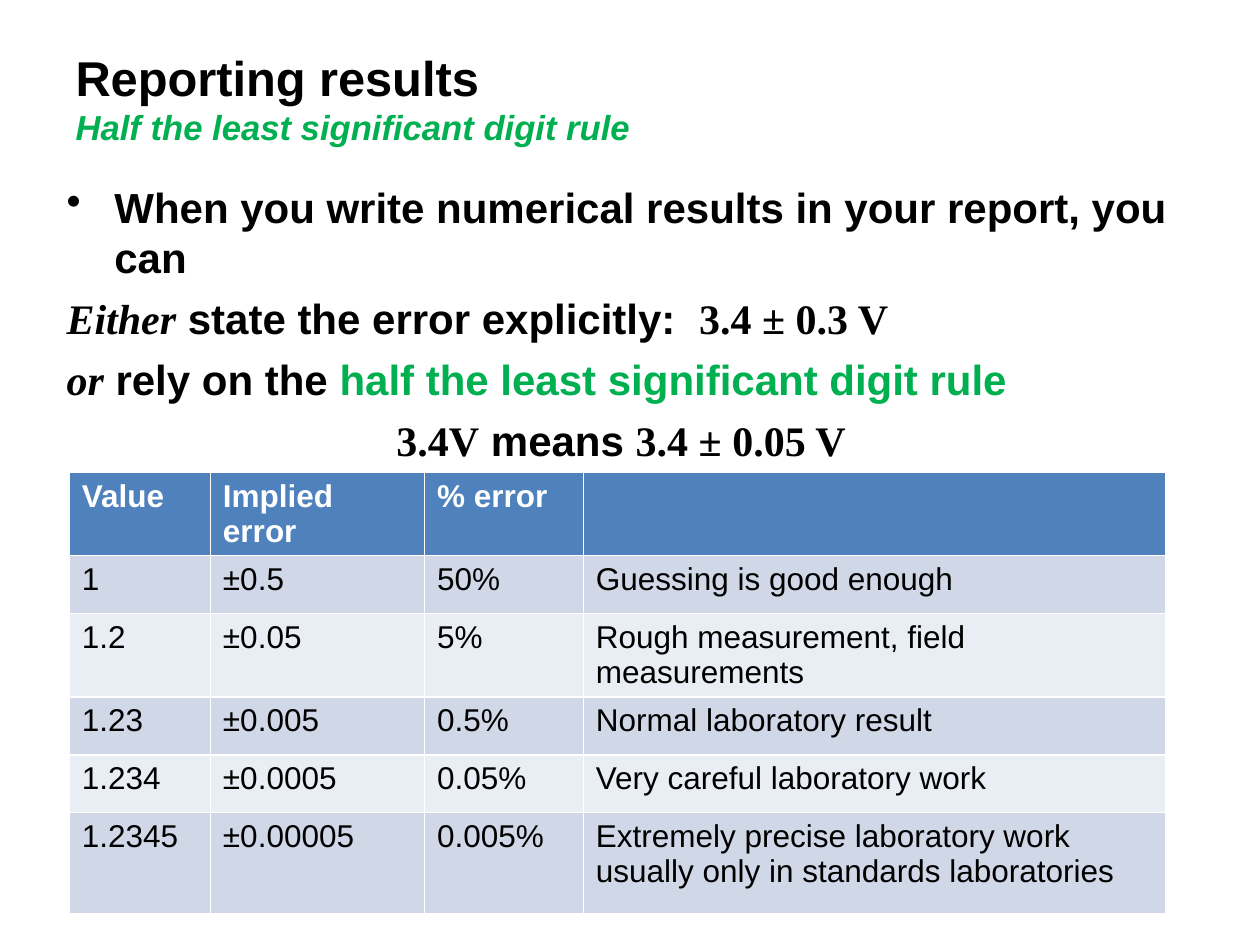
from pptx import Presentation
from pptx.dml.color import RGBColor
from pptx.enum.text import MSO_ANCHOR, PP_ALIGN
from pptx.oxml.xmlchemy import OxmlElement
from pptx.util import Inches, Pt

LEFT, CENTER = PP_ALIGN.LEFT, PP_ALIGN.CENTER
MIDDLE = MSO_ANCHOR.MIDDLE
SANS, SERIF = "Arial", "Times New Roman"
COLORS = {
    "text": "000000",
    "accent": "00B050",
    "header": "4F81BD",
    "header_text": "FFFFFF",
    "odd_row": "D0D8E8",
    "even_row": "E9EDF4",
}

STATEMENTS = [
    [("When you write numerical results in your report, you can", {})],
    [
        ("Either", {"font": SERIF, "italic": True}),
        (" state the error explicitly:  ", {}),
        ("3.4 ± 0.3 V", {"font": SERIF}),
    ],
    [
        ("or", {"font": SERIF, "italic": True}),
        (" rely on the ", {}),
        ("half the least significant digit rule", {"color": "accent"}),
    ],
    [
        ("3.4V", {"font": SERIF}),
        (" means ", {}),
        ("3.4 ± 0.05 V", {"font": SERIF}),
    ],
]

COLUMN_WIDTHS = [1.12, 1.7, 1.26, 4.62]
ROW_HEIGHTS = [0.46] * 5 + [0.8]
PRECISION_ROWS = [
    ("Value", "Implied error", "% error", ""),
    ("1", "±0.5", "50%", "Guessing is good enough"),
    ("1.2", "±0.05", "5%", "Rough measurement, field measurements"),
    ("1.23", "±0.005", "0.5%", "Normal laboratory result"),
    ("1.234", "±0.0005", "0.05%", "Very careful laboratory work"),
    ("1.2345", "±0.00005", "0.005%",
     "Extremely precise laboratory work\nusually only in standards laboratories"),
]


def add_run(paragraph, text, size, font=SANS, color="text", bold=True, italic=False):
    run = paragraph.add_run()
    run.text = text
    run.font.name = font
    run.font.size = Pt(size)
    run.font.bold = bold
    run.font.italic = italic
    run.font.color.rgb = RGBColor.from_string(COLORS[color])


def add_bullet(paragraph, indent):
    properties = paragraph._p.get_or_add_pPr()
    properties.set("marL", str(indent))
    properties.set("indent", str(-indent))
    bullet = OxmlElement("a:buChar")
    bullet.set("char", "•")
    properties.append(bullet)


def fill_title(title):
    title.left, title.top = Inches(0.5), Inches(0.3)
    title.width, title.height = Inches(9), Inches(0.95)
    title.text_frame.vertical_anchor = MIDDLE
    heading = title.text_frame.paragraphs[0]
    heading.alignment = LEFT
    add_run(heading, "Reporting results", 27.9)
    heading.add_line_break()
    add_run(heading, "Half the least significant digit rule", 19.8,
            color="accent", italic=True)


def add_statements(slide):
    frame = slide.shapes.add_textbox(
        Inches(0.43), Inches(1.39), Inches(9), Inches(2.72)).text_frame
    frame.word_wrap = True
    for index, statement in enumerate(STATEMENTS):
        paragraph = frame.add_paragraph() if index else frame.paragraphs[0]
        paragraph.space_before = Pt(6)
        for text, style in statement:
            add_run(paragraph, text, 24, **style)
    add_bullet(frame.paragraphs[0], Inches(0.38))
    frame.paragraphs[-1].alignment = CENTER


def fill_cell(cell, text, fill, color, bold):
    cell.fill.solid()
    cell.fill.fore_color.rgb = RGBColor.from_string(COLORS[fill])
    paragraph = cell.text_frame.paragraphs[0]
    for index, line in enumerate(text.split("\n")):
        if index:
            paragraph.add_line_break()
        if line:
            add_run(paragraph, line, 18, color=color, bold=bold)


def add_precision_table(slide):
    table = slide.shapes.add_table(
        len(ROW_HEIGHTS), len(COLUMN_WIDTHS), Inches(0.55), Inches(3.75),
        Inches(sum(COLUMN_WIDTHS)), Inches(sum(ROW_HEIGHTS))).table
    for column, width in zip(table.columns, COLUMN_WIDTHS):
        column.width = Inches(width)
    for index, (row, height) in enumerate(zip(table.rows, ROW_HEIGHTS)):
        row.height = Inches(height)
        is_header = index == 0
        band = "odd_row" if index % 2 else "even_row"
        for cell, text in zip(row.cells, PRECISION_ROWS[index]):
            fill_cell(cell, text, "header" if is_header else band,
                      "header_text" if is_header else "text", is_header)


def main():
    presentation = Presentation()
    presentation.slide_width = Inches(10)
    presentation.slide_height = Inches(7.5)
    slide = presentation.slides.add_slide(presentation.slide_layouts[5])
    fill_title(slide.shapes.title)
    add_precision_table(slide)
    add_statements(slide)
    presentation.save("out.pptx")


if __name__ == "__main__":
    main()
